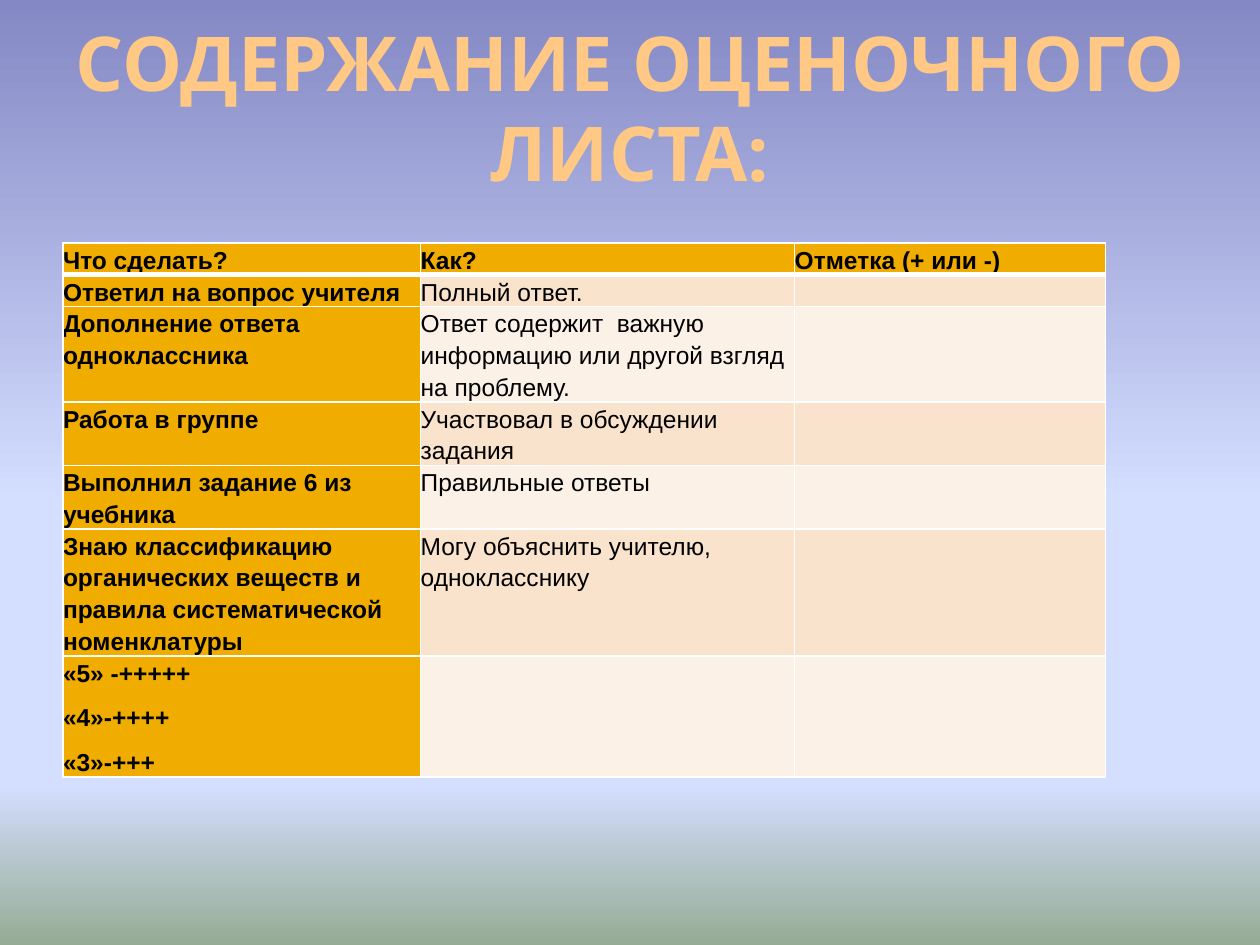
from copy import deepcopy

from lxml import etree
from pptx import Presentation
from pptx.dml.color import RGBColor
from pptx.enum.text import MSO_ANCHOR, MSO_AUTO_SIZE, PP_ALIGN
from pptx.oxml.ns import qn
from pptx.util import Cm, Pt

BOTTOM = MSO_ANCHOR.BOTTOM
NO_AUTOFIT = MSO_AUTO_SIZE.NONE
CENTER = PP_ALIGN.CENTER
TITLE_ONLY = 5

TITLE = "СОДЕРЖАНИЕ ОЦЕНОЧНОГО ЛИСТА:"
CRITERIA = [
    ("Что сделать?", "Как?", "Отметка (+ или -)"),
    ("Ответил на вопрос учителя", "Полный ответ.", ""),
    ("Дополнение ответа одноклассника",
     "Ответ содержит\u00a0 важную информацию или другой взгляд на проблему.", ""),
    ("Работа в группе", "Участвовал в обсуждении задания", ""),
    ("Выполнил задание 6 из учебника", "Правильные ответы", ""),
    ("Знаю классификацию органических веществ и правила "
     "систематической номенклатуры", "Могу объяснить учителю, однокласснику", ""),
    ("«5» -+++++\n«4»-++++\n«3»-+++", "", ""),
]
COLUMN_WIDTHS = [7.21, 7.54, 6.27]
ROW_HEIGHTS = [0.64, 0.64, 1.92, 1.28, 1.28, 2.56, 2.44]
SKY = [(0, "8488C4"), (0.53, "D4DEFF"), (0.83, "D4DEFF"), (1, "96AB94")]


def color(hex_code):
    return RGBColor.from_string(hex_code)


def assign(target, values):
    for name, value in values.items():
        setattr(target, name, value)


class SlideBuilder:
    accent, bands, border = "F0AD00", ("FCF1E7", "F9E3CC"), "FFFFFF"
    title_color, text_color = "FFC985", "000000"
    title_font = {"name": "Noto Sans", "size": Pt(43.2), "bold": True}
    cell_font = {"name": "Arial", "size": Pt(14)}
    cell_paragraph = {"line_spacing": 1.15, "space_after": Pt(7.5)}
    cell_margins = dict.fromkeys(
        ("margin_left", "margin_right", "margin_top", "margin_bottom"), 0)

    def __init__(self, slide):
        self.slide = slide

    def background(self, stops):
        fill = self.slide.background.fill
        fill.gradient()
        fill.gradient_angle = 270
        stop_list = self.slide.element.xpath(".//a:gsLst")[0]
        for _ in range(len(stops) - len(stop_list)):
            stop_list.append(deepcopy(stop_list[0]))
        for stop, (position, hex_code) in zip(fill.gradient_stops, stops):
            stop.position = position
            stop.color.rgb = color(hex_code)

    def title(self, text, left, top, width, height):
        heading = self.slide.shapes.title
        assign(heading, {"left": Cm(left), "top": Cm(top),
                         "width": Cm(width), "height": Cm(height)})
        frame = heading.text_frame
        assign(frame, {"text": text, "word_wrap": True, "auto_size": NO_AUTOFIT,
                       "vertical_anchor": BOTTOM, "margin_top": 0,
                       "margin_bottom": Cm(1.85), "margin_left": Cm(0.13),
                       "margin_right": Cm(0.13)})
        paragraph = frame.paragraphs[0]
        paragraph.alignment = CENTER
        font = paragraph.runs[0].font
        assign(font, self.title_font)
        font.color.rgb = color(self.title_color)

    def table(self, rows, left, top, widths, heights):
        grid = self.slide.shapes.add_table(
            len(rows), len(widths), Cm(left), Cm(top),
            Cm(sum(widths)), Cm(sum(heights))).table
        for column, width in zip(grid.columns, widths):
            column.width = Cm(width)
        for row, height in zip(grid.rows, heights):
            row.height = Cm(height)
        for r, texts in enumerate(rows):
            for c, text in enumerate(texts):
                is_heading = r == 0 or c == 0
                fill = self.accent if is_heading else self.bands[r % 2]
                self.cell(grid.cell(r, c), text, fill, is_heading,
                          top_line=3 if r == 1 else 1,
                          bottom_line=3 if r == 0 else 1)

    def cell(self, cell, text, fill, bold, top_line, bottom_line):
        cell.text = text
        assign(cell, self.cell_margins)
        for paragraph in cell.text_frame.paragraphs:
            assign(paragraph, self.cell_paragraph)
            for run in paragraph.runs:
                assign(run.font, {**self.cell_font, "bold": bold})
                run.font.color.rgb = color(self.text_color)
            if not paragraph.runs:
                end = etree.SubElement(paragraph._p, qn("a:endParaRPr"))
                end.set("sz", str(self.cell_font["size"].centipoints))
        self.cell_borders(cell, {"L": 1, "R": 1, "T": top_line, "B": bottom_line})
        cell.fill.solid()
        cell.fill.fore_color.rgb = color(fill)

    def cell_borders(self, cell, widths):
        """Draw the sides; must run before the cell gets its fill."""
        properties = cell._tc.get_or_add_tcPr()
        for side, width in widths.items():
            line = etree.SubElement(properties, qn(f"a:ln{side}"), w=str(Pt(width)))
            solid = etree.SubElement(line, qn("a:solidFill"))
            etree.SubElement(solid, qn("a:srgbClr"), val=self.border)


def main():
    deck = Presentation()
    assign(deck, {"slide_width": Cm(25.4), "slide_height": Cm(19.05)})
    builder = SlideBuilder(deck.slides.add_slide(deck.slide_layouts[TITLE_ONLY]))
    builder.background(SKY)
    builder.title(TITLE, 1.27, 0.74, 22.86, 5.08)
    builder.table(CRITERIA, 1.27, 4.9, COLUMN_WIDTHS, ROW_HEIGHTS)
    deck.save("out.pptx")


if __name__ == "__main__":
    main()
